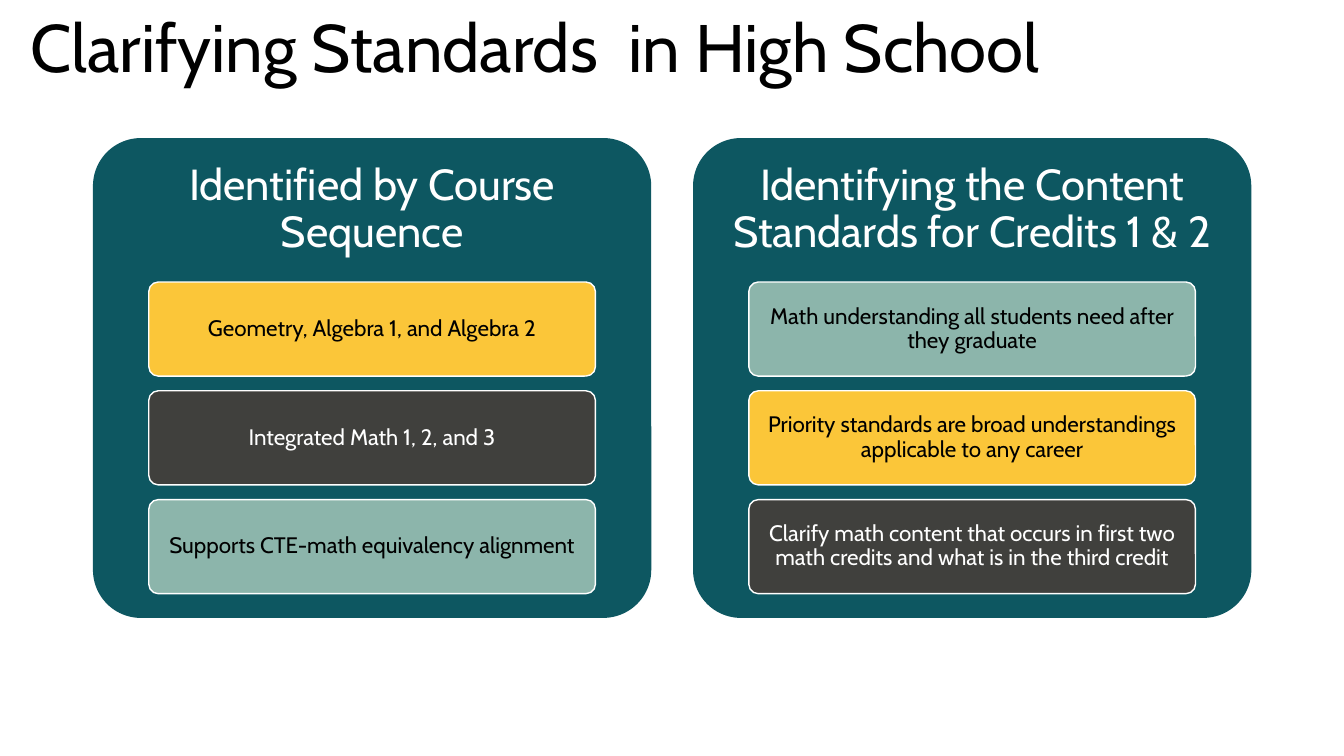
from pptx import Presentation
from pptx.dml.color import RGBColor
from pptx.enum.shapes import MSO_SHAPE
from pptx.enum.text import MSO_ANCHOR, PP_ALIGN
from pptx.util import Pt

ROUNDED = MSO_SHAPE.ROUNDED_RECTANGLE
TOP, MIDDLE = MSO_ANCHOR.TOP, MSO_ANCHOR.MIDDLE
LEFT, CENTER = PP_ALIGN.LEFT, PP_ALIGN.CENTER

THEME = {
    "font": "Cabin",
    "title_size": 48,
    "heading_size": 31,
    "tile_size": 16,
    "black": RGBColor.from_string("000000"),
    "white": RGBColor.from_string("FFFFFF"),
    "teal": RGBColor.from_string("0D5761"),
    "gold": RGBColor.from_string("FBC639"),
    "charcoal": RGBColor.from_string("40403D"),
    "sage": RGBColor.from_string("8CB5AB"),
}

PANEL_LEFT, PANEL_TOP = 66.4, 98.6
PANEL_WIDTH, PANEL_HEIGHT = 398.8, 342.8
PANEL_PITCH = 428.6
HEADING_HEIGHT = PANEL_HEIGHT * 0.3
TILE_INDENT = PANEL_WIDTH * 0.1
TILE_WIDTH = PANEL_WIDTH * 0.8
TILE_HEIGHT, TILE_PITCH = 67.2, 77.7

PANELS = [
    ("Identified by Course Sequence", [
        ("Geometry, Algebra 1, and Algebra 2", "gold", "black"),
        ("Integrated Math 1, 2, and 3", "charcoal", "white"),
        ("Supports CTE-math equivalency alignment", "sage", "black"),
    ]),
    ("Identifying the Content Standards for Credits 1 & 2", [
        ("Math understanding all students need after they graduate", "sage", "black"),
        ("Priority standards are broad understandings applicable to any career",
         "gold", "black"),
        ("Clarify math content that occurs in first two math credits "
         "and what is in the third credit", "charcoal", "white"),
    ]),
]


def write_text(shape, text, size, color, alignment, anchor, spacing, inset_x, inset_y):
    frame = shape.text_frame
    frame_format = {
        "word_wrap": True,
        "vertical_anchor": anchor,
        "margin_left": Pt(inset_x),
        "margin_right": Pt(inset_x),
        "margin_top": Pt(inset_y),
        "margin_bottom": Pt(inset_y),
    }
    for name, value in frame_format.items():
        setattr(frame, name, value)
    paragraph = frame.paragraphs[0]
    paragraph.text = text
    paragraph.alignment = alignment
    paragraph.line_spacing = spacing
    for name, value in {"name": THEME["font"], "size": Pt(THEME[size])}.items():
        setattr(paragraph.font, name, value)
    paragraph.font.color.rgb = THEME[color]


def add_rounded(slide, left, top, width, height, fill):
    shape = slide.shapes.add_shape(ROUNDED, Pt(left), Pt(top), Pt(width), Pt(height))
    shape.adjustments[0] = 0.1
    shape.shadow.inherit = False
    shape.fill.solid()
    shape.fill.fore_color.rgb = THEME[fill]
    return shape


presentation = Presentation()
presentation.slide_width = Pt(960)
presentation.slide_height = Pt(540)
slide = presentation.slides.add_slide(presentation.slide_layouts[6])

title = slide.shapes.add_textbox(Pt(14.4), Pt(0), Pt(859), Pt(65.5))
write_text(title, "Clarifying Standards  in High School", "title_size", "black",
           LEFT, TOP, 1.0, 7.2, 3.6)

for column, (heading, tiles) in enumerate(PANELS):
    panel_left = PANEL_LEFT + column * PANEL_PITCH
    panel = add_rounded(slide, panel_left, PANEL_TOP, PANEL_WIDTH, PANEL_HEIGHT, "teal")
    panel.line.fill.background()

    heading_box = slide.shapes.add_textbox(
        Pt(panel_left), Pt(PANEL_TOP), Pt(PANEL_WIDTH), Pt(HEADING_HEIGHT))
    write_text(heading_box, heading, "heading_size", "white", CENTER, MIDDLE, 0.9, 9.4, 9.4)

    for row, (text, fill, color) in enumerate(tiles):
        tile_top = PANEL_TOP + HEADING_HEIGHT + row * TILE_PITCH
        tile = add_rounded(slide, panel_left + TILE_INDENT, tile_top,
                           TILE_WIDTH, TILE_HEIGHT, fill)
        tile.line.color.rgb = THEME["white"]
        tile.line.width = Pt(1)
        write_text(tile, text, "tile_size", color, CENTER, MIDDLE, 0.9, 3, 2)

presentation.save("out.pptx")
